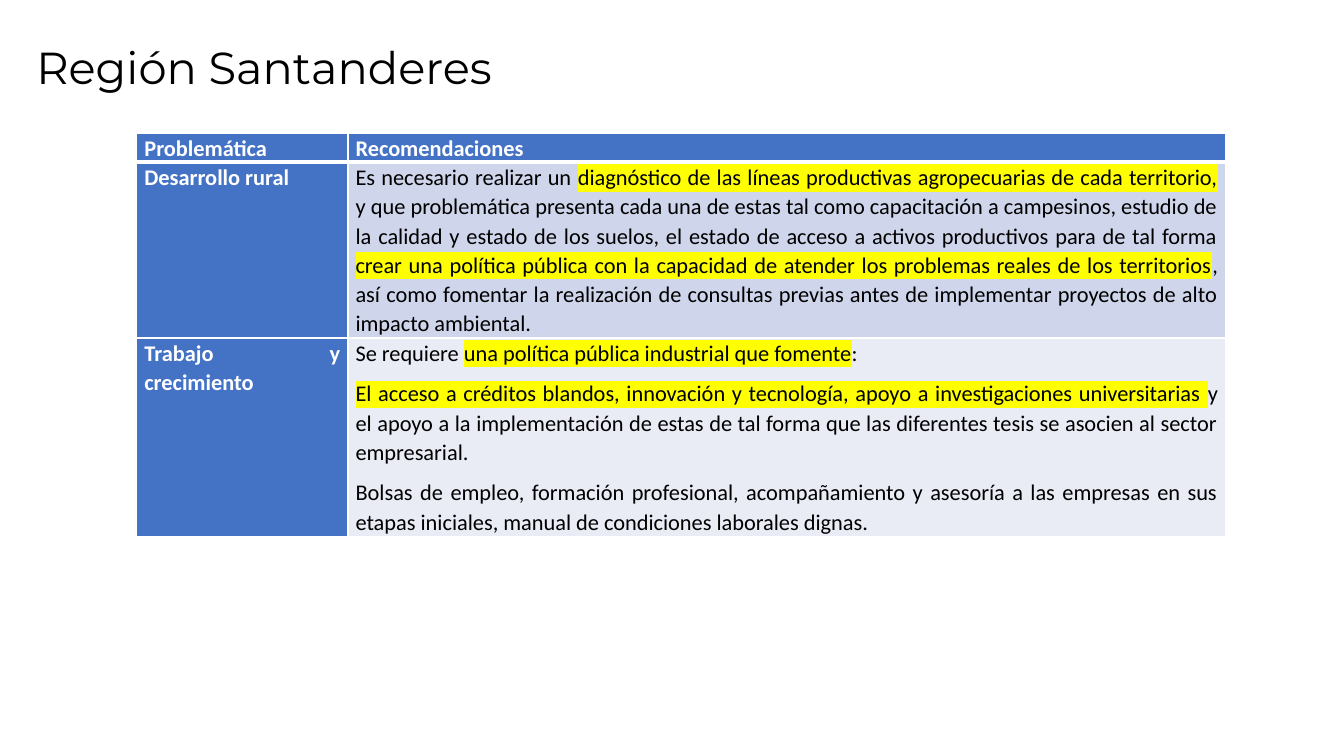
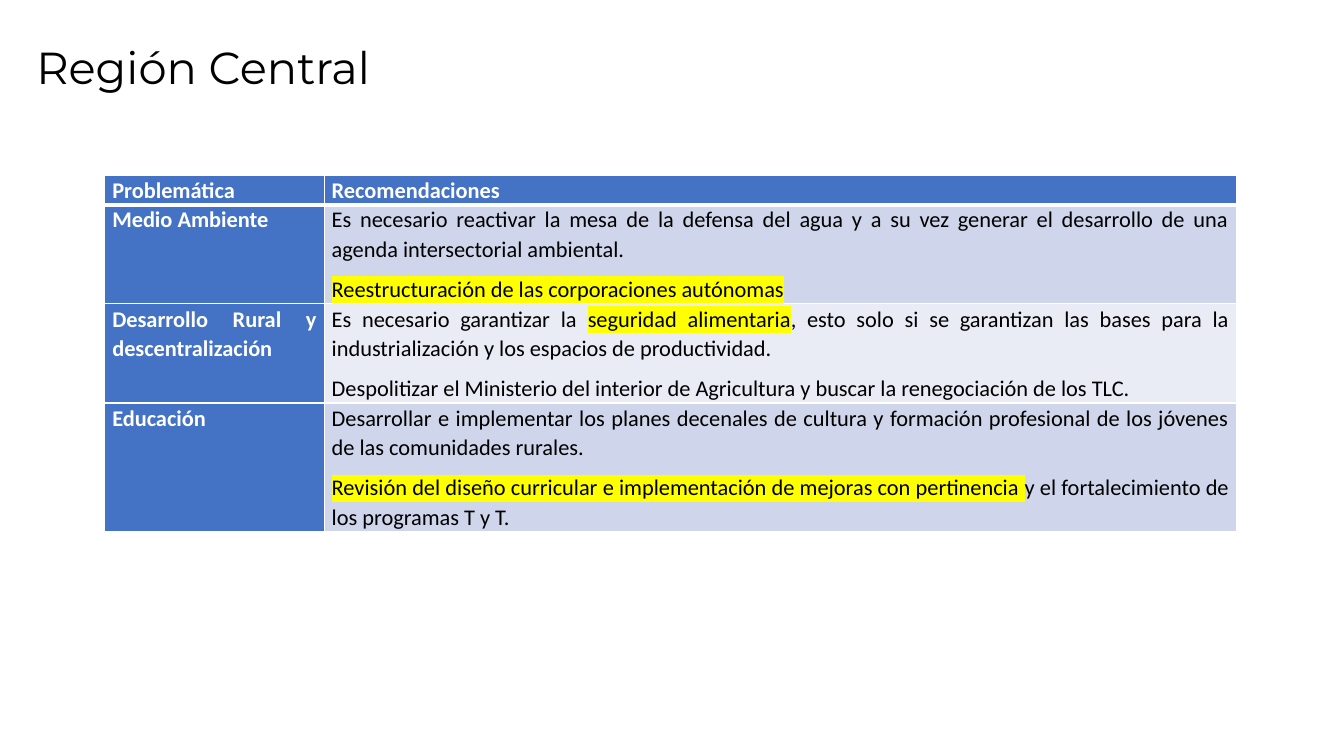
from dataclasses import dataclass
from lxml.etree import SubElement
from pptx import Presentation
from pptx.dml.color import RGBColor
from pptx.enum.text import MSO_ANCHOR, MSO_AUTO_SIZE, PP_ALIGN
from pptx.oxml.ns import qn
from pptx.util import Cm, Pt


@dataclass(frozen=True)
class Theme:
    ink: str = "000000"
    paper: str = "FFFFFF"
    accent: str = "4472C4"
    bands: tuple = ("CFD5EA", "E9EBF5")
    marker: str = "FFFF00"
    title_font: str = "Montserrat"
    body_font: str = "Calibri"
    title_size: int = 32
    body_size: int = 16
    thin: int = 1
    thick: int = 3


@dataclass(frozen=True)
class Box:
    left: float
    top: float
    width: float
    height: float = 0

    def lengths(self):
        return Cm(self.left), Cm(self.top), Cm(self.width), Cm(self.height)


THEME = Theme()
TITLE_BOX = Box(0.66, 0.86, 25.35, 1.8)
HEADINGS = ("Problemática", ["Recomendaciones"])
HEADING_HEIGHT = 0.72
TOPIC_SHARE = 0.194
MARK = "|"

REGIONS = [
    (
        "Región Santanderes",
        Box(3.45, 3.35, 27.43),
        [
            (4.42, "Desarrollo rural", [
                "Es necesario realizar un |diagnóstico de las líneas productivas agropecuarias "
                "de cada territorio,| y que problemática presenta cada una de estas tal como "
                "capacitación a campesinos, estudio de la calidad y estado de los suelos, el "
                "estado de acceso a activos productivos para de tal forma |crear una política "
                "pública con la capacidad de atender los problemas reales de los territorios|, "
                "así como fomentar la realización de consultas previas antes de implementar "
                "proyectos de alto impacto ambiental.",
            ]),
            (4.74, "Trabajo y crecimiento", [
                "Se requiere |una política pública industrial que fomente|:",
                "|El acceso a créditos blandos, innovación y tecnología, apoyo a "
                "investigaciones universitarias |y el apoyo a la implementación de estas de tal "
                "forma que las diferentes tesis se asocien al sector empresarial.",
                "Bolsas de empleo, formación profesional, acompañamiento y asesoría a las "
                "empresas en sus etapas iniciales, manual de condiciones laborales dignas.",
            ]),
        ],
    ),
    (
        "Región Central",
        Box(2.64, 4.42, 28.52),
        [
            (2.44, "Medio Ambiente", [
                "Es necesario reactivar la mesa de la defensa del agua y a su vez generar el "
                "desarrollo de una agenda intersectorial ambiental.",
                "|Reestructuración de las corporaciones autónomas|",
            ]),
            (2.44, "Desarrollo Rural y descentralización", [
                "Es necesario garantizar la |seguridad alimentaria|, esto solo si se garantizan "
                "las bases para la industrialización y los espacios de productividad.",
                "Despolitizar el Ministerio del interior de Agricultura y buscar la "
                "renegociación de los TLC.",
            ]),
            (3.09, "Educación", [
                "Desarrollar e implementar los planes decenales de cultura y formación "
                "profesional de los jóvenes de las comunidades rurales.",
                "|Revisión del diseño curricular e implementación de mejoras con pertinencia |y "
                "el fortalecimiento de los programas T y T.",
            ]),
        ],
    ),
]


def style_run(run, font_name, size, color, bold=False):
    run.font.name = font_name
    run.font.size = Pt(size)
    run.font.bold = bold
    run.font.color.rgb = RGBColor.from_string(color)


def highlight(run):
    properties = run.font._element
    marker = SubElement(properties, qn("a:highlight"))
    SubElement(marker, qn("a:srgbClr"), val=THEME.marker)
    properties.find(qn("a:solidFill")).addnext(marker)


def border_cell(cell, top, bottom):
    properties = cell._tc.get_or_add_tcPr()
    sides = (("L", THEME.thin), ("R", THEME.thin), ("T", top), ("B", bottom))
    for position, (side, weight) in enumerate(sides):
        line = SubElement(properties, qn(f"a:ln{side}"), w=str(Pt(weight)))
        SubElement(SubElement(line, qn("a:solidFill")), qn("a:srgbClr"), val=THEME.paper)
        properties.insert(position, line)


def fill_cell(cell, paragraphs, background, color, bold):
    cell.fill.solid()
    cell.fill.fore_color.rgb = RGBColor.from_string(background)
    cell.margin_left = cell.margin_right = Cm(0.19)
    cell.margin_top = cell.margin_bottom = 0
    cell.vertical_anchor = MSO_ANCHOR.TOP
    for number, wording in enumerate(paragraphs):
        frame = cell.text_frame
        paragraph = frame.add_paragraph() if number else frame.paragraphs[0]
        paragraph.alignment = PP_ALIGN.JUSTIFY
        paragraph.line_spacing = 1.07
        paragraph.space_after = Pt(8)
        for order, phrase in enumerate(wording.split(MARK)):
            if phrase:
                run = paragraph.add_run()
                run.text = phrase
                style_run(run, THEME.body_font, THEME.body_size, color, bold)
                if order % 2:
                    highlight(run)


def place_title(slide, wording, box):
    title = slide.shapes.title
    title.left, title.top, title.width, title.height = box.lengths()
    frame = title.text_frame
    frame.text = wording
    frame.word_wrap = True
    frame.auto_size = MSO_AUTO_SIZE.NONE
    frame.vertical_anchor = MSO_ANCHOR.MIDDLE
    paragraph = frame.paragraphs[0]
    paragraph.alignment = PP_ALIGN.LEFT
    paragraph.line_spacing = 0.9
    style_run(paragraph.runs[0], THEME.title_font, THEME.title_size, THEME.ink)


def place_recommendations(slide, problems, box):
    rows = [(HEADING_HEIGHT, *HEADINGS), *problems]
    table = slide.shapes.add_table(len(rows), 2, *box.lengths()).table
    table.first_col = True
    topic_width = round(box.width * TOPIC_SHARE, 2)
    for column, width in zip(table.columns, (topic_width, box.width - topic_width)):
        column.width = Cm(width)
    for index, (height, topic, advice) in enumerate(rows):
        is_heading = index == 0
        table.rows[index].height = Cm(height)
        topic_cell, advice_cell = table.rows[index].cells
        fill_cell(topic_cell, [topic], THEME.accent, THEME.paper, True)
        band = THEME.accent if is_heading else THEME.bands[(index - 1) % 2]
        color = THEME.paper if is_heading else THEME.ink
        fill_cell(advice_cell, advice, band, color, is_heading)
        for cell in (topic_cell, advice_cell):
            border_cell(
                cell,
                top=THEME.thick if index == 1 else THEME.thin,
                bottom=THEME.thick if is_heading else THEME.thin,
            )


def add_region_slide(deck, name, table_box, problems):
    slide = deck.slides.add_slide(deck.slide_layouts[5])
    place_title(slide, name, TITLE_BOX)
    place_recommendations(slide, problems, table_box)


def main():
    deck = Presentation()
    deck.slide_width, deck.slide_height = Cm(33.87), Cm(19.05)
    for name, table_box, problems in REGIONS:
        add_region_slide(deck, name, table_box, problems)
    deck.save("out.pptx")


if __name__ == "__main__":
    main()
